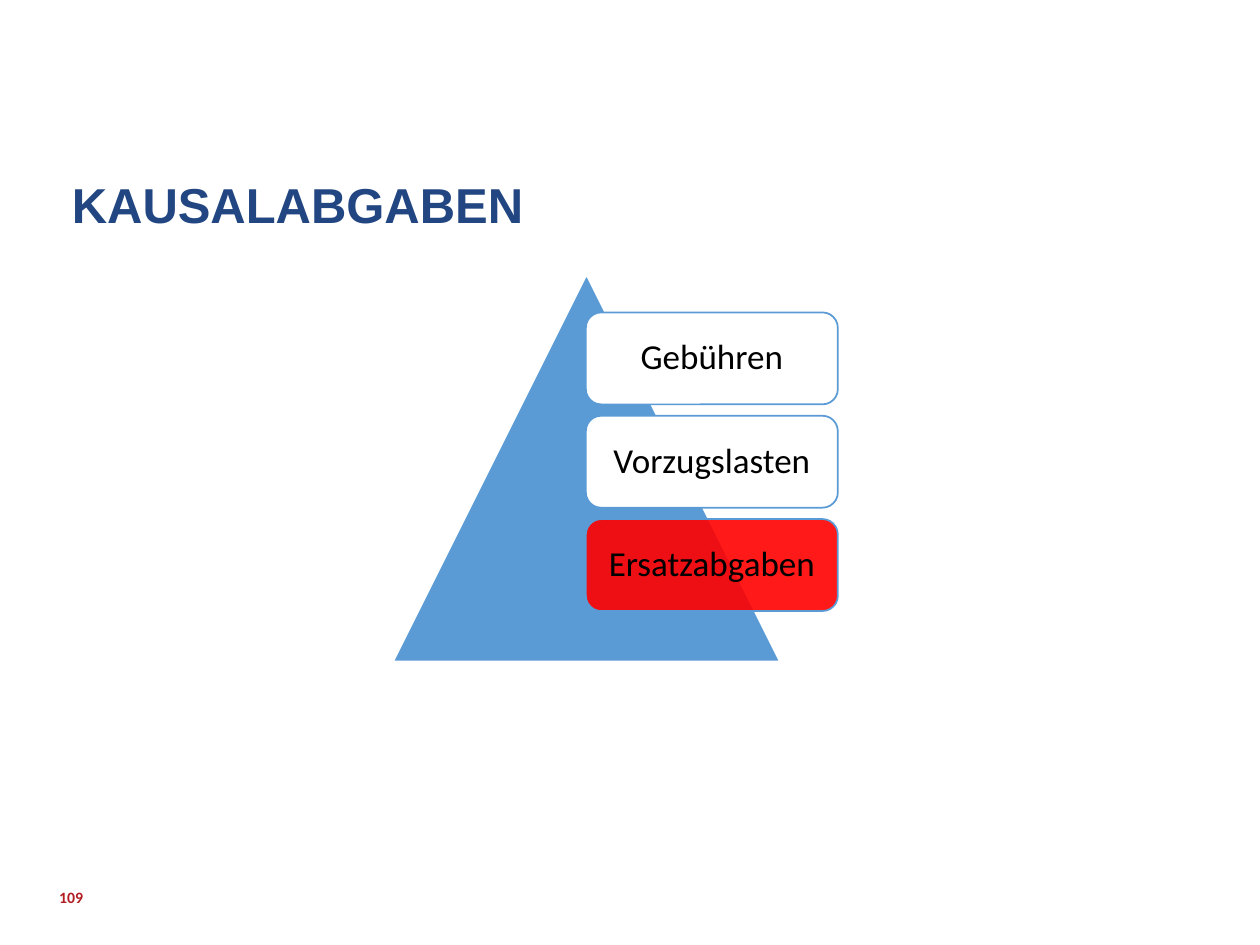
"""Build the Kausalabgaben slide: a pyramid with three labelled boxes."""
from lxml import etree
from pptx import Presentation
from pptx import util as u
from pptx.dml.color import RGBColor
from pptx.enum import shapes, text
from pptx.oxml.ns import qn

COLORS = {"title": "224681", "blue": "5B9BD5", "white": "FFFFFF",
          "red": "FF0000", "black": "000000", "number": "B21D24"}


class Deck:
    """Holds the style and the current slide; lengths are shares of the slide's size."""

    def __init__(self, width, height):
        self.prs = Presentation()
        self.prs.slide_width, self.prs.slide_height = u.Inches(width), u.Inches(height)
        self.s = self.prs.slides.add_slide(self.prs.slide_layouts[5])

    def place(self, x, y, w, h):
        """Turn shares into slide lengths."""
        sw, sh = self.prs.slide_width, self.prs.slide_height
        return int(x * sw), int(y * sh), int(w * sw), int(h * sh)

    def add_text(self, sp, words, size, color, font="Calibri", bold=False,
                 align=text.PP_ALIGN.LEFT, anchor=text.MSO_ANCHOR.MIDDLE,
                 inset=(0, 0), spacing=1.0):
        """Fill a shape with one formatted run."""
        tf = sp.text_frame
        tf.word_wrap = True
        tf.auto_size = text.MSO_AUTO_SIZE.NONE
        tf.vertical_anchor = anchor
        tf.margin_left = tf.margin_right = u.Inches(inset[0])
        tf.margin_top = tf.margin_bottom = u.Inches(inset[1])
        p = tf.paragraphs[0]
        p.alignment, p.line_spacing = align, spacing
        r = p.add_run()
        r.text = words
        r.font.name, r.font.size, r.font.bold = font, u.Pt(size), bold
        r.font.color.rgb = RGBColor.from_string(COLORS[color])

    def title(self, words, box):
        """Move and format the title placeholder."""
        sp = self.s.shapes.title
        sp.left, sp.top, sp.width, sp.height = self.place(*box)
        self.add_text(sp, words, 28, "title", "Arial", True,
                      anchor=text.MSO_ANCHOR.TOP, inset=(0.1, 0.05), spacing=0.9)

    def shape(self, kind, box, fill, line, opacity=100):
        """Add a filled and outlined preset shape."""
        sp = self.s.shapes.add_shape(kind, *self.place(*box))
        sp.shadow.inherit = False
        sp.fill.solid()
        sp.fill.fore_color.rgb = RGBColor.from_string(COLORS[fill])
        sp.line.color.rgb = RGBColor.from_string(COLORS[line])
        sp.line.width = u.Pt(1)
        if opacity < 100:
            color = sp.element.spPr.find(qn("a:solidFill"))[0]
            etree.SubElement(color, qn("a:alpha"), val=str(opacity * 1000))
        return sp

    def label(self, words, box, fill, opacity):
        """Add a rounded box with centred text."""
        sp = self.shape(shapes.MSO_SHAPE.ROUNDED_RECTANGLE, box, fill, "blue", opacity)
        self.add_text(sp, words, 20, "black", align=text.PP_ALIGN.CENTER,
                      inset=(0.11, 0.11), spacing=0.9)

    def number(self, words, box):
        """Add the page number."""
        sp = self.s.shapes.add_textbox(*self.place(*box))
        self.add_text(sp, words, 9, "number", bold=True)


def main():
    """Compose and save the slide."""
    deck = Deck(10, 7.5)
    deck.title("KAUSALABGABEN", (0.047, 1.39 / 7.5, 0.764, 0.94 / 7.5))
    deck.shape(shapes.MSO_SHAPE.ISOSCELES_TRIANGLE,
               (0.312, 2.18 / 7.5, 0.307, 3.07 / 7.5), "blue", "white")
    labels = [("Gebühren", "white", 100), ("Vorzugslasten", "white", 100),
              ("Ersatzabgaben", "red", 90)]
    for row, (words, fill, opacity) in enumerate(labels):
        top = (2.48 + 0.82 * row) / 7.5
        deck.label(words, (0.465, top, 0.2, 0.73 / 7.5), fill, opacity)
    deck.number("109", (0.047, 6.92 / 7.5, 0.225, 0.4 / 7.5))
    deck.prs.save("out.pptx")


if __name__ == "__main__":
    main()
